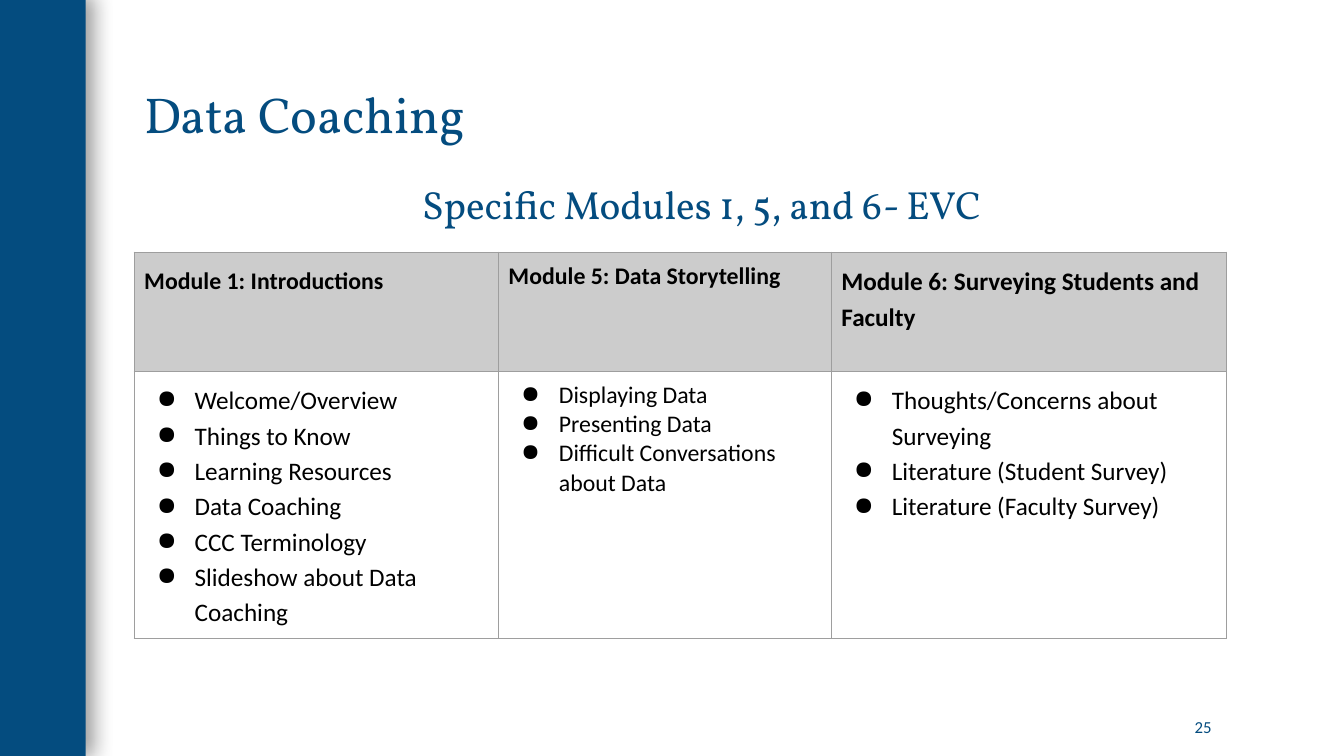
"""Build the Data Coaching slide with its table of specific modules."""
from lxml.etree import SubElement
from pptx import Presentation
from pptx.dml.color import RGBColor
from pptx.enum.shapes import MSO_SHAPE
from pptx.enum.text import MSO_ANCHOR, PP_ALIGN
from pptx.oxml import parse_xml
from pptx.oxml.ns import nsdecls, qn
from pptx.util import Pt

BLUE, BLACK, GREY, BORDER = "044C7F", "000000", "CCCCCC", "9E9E9E"

HEADINGS = [
    {"text": "Data Coaching", "box": (95.8, 54.7, 812.2, 51.8), "size": 36, "font": "Vollkorn",
     "align": PP_ALIGN.LEFT, "anchor": MSO_ANCHOR.BOTTOM, "spacing": 0.9},
    {"text": "Specific Modules 1, 5, and 6- EVC", "box": (84.2, 128.9, 833.8, 400.3), "size": 28,
     "font": "Vollkorn", "align": PP_ALIGN.CENTER, "anchor": MSO_ANCHOR.TOP, "spacing": 0.9},
    {"text": "25", "box": (782.6, 509.8, 90, 19.4), "size": 12, "font": "Calibri",
     "align": PP_ALIGN.RIGHT, "anchor": MSO_ANCHOR.MIDDLE, "spacing": 1},
]

MODULES = [
    {"title": "Module 1: Introductions", "width": 260.2, "title_size": 17, "title_spacing": 1.15,
     "topic_size": 18, "topic_spacing": 1.15,
     "topics": ["Welcome/Overview", "Things to Know", "Learning Resources", "Data Coaching",
                "CCC Terminology", "Slideshow about Data Coaching"]},
    {"title": "Module 5: Data Storytelling", "width": 237.8, "title_size": 17, "title_spacing": 1,
     "topic_size": 17, "topic_spacing": 1,
     "topics": ["Displaying Data", "Presenting Data", "Difficult Conversations about Data"]},
    {"title": "Module 6: Surveying Students and Faculty", "width": 282.5, "title_size": 18,
     "title_spacing": 1.15, "topic_size": 18, "topic_spacing": 1.15,
     "topics": ["Thoughts/Concerns about Surveying", "Literature (Student Survey)",
                "Literature (Faculty Survey)"]},
]
TABLE_LEFT, TABLE_TOP = 95.8, 180
ROW_HEIGHTS = [85, 190.8]
CELL_INSET, TOPIC_INDENT, BULLET_HANG = 7.2, 36, 27


def color(hex_text):
    return RGBColor.from_string(hex_text)


def style(paragraph, size, font, ink, spacing, bold=False):
    paragraph.line_spacing = spacing
    for run in paragraph.runs:
        run.font.size = Pt(size)
        run.font.name = font
        run.font.bold = bold
        run.font.color.rgb = color(ink)


def add_bullet(paragraph):
    properties = paragraph._p.get_or_add_pPr()
    properties.set("marL", str(Pt(TOPIC_INDENT)))
    properties.set("indent", str(-Pt(BULLET_HANG)))
    bullet_color = SubElement(properties, qn("a:buClr"))
    SubElement(bullet_color, qn("a:srgbClr"), val=BLACK)
    SubElement(properties, qn("a:buChar"), char="●")


def add_borders(cell):
    properties = cell._tc.get_or_add_tcPr()
    for side in ("lnL", "lnR", "lnT", "lnB"):
        line = SubElement(properties, qn(f"a:{side}"), w=str(Pt(0.75)))
        fill = SubElement(line, qn("a:solidFill"))
        SubElement(fill, qn("a:srgbClr"), val=BORDER)


def add_sidebar(slide):
    sidebar = slide.shapes.add_shape(MSO_SHAPE.RECTANGLE, Pt(0), Pt(-2.9), Pt(61.2), Pt(542.9))
    sidebar.fill.solid()
    sidebar.fill.fore_color.rgb = color(BLUE)
    sidebar.line.fill.background()
    sidebar._element.spPr.append(parse_xml(
        f'<a:effectLst {nsdecls("a")}>'
        f'<a:outerShdw blurRad="{Pt(15)}" dist="{Pt(5)}" dir="0" rotWithShape="0">'
        f'<a:srgbClr val="{BLACK}"><a:alpha val="40000"/></a:srgbClr>'
        '</a:outerShdw></a:effectLst>'))


def add_heading(slide, heading):
    frame = slide.shapes.add_textbox(*map(Pt, heading["box"])).text_frame
    frame.word_wrap = True
    frame.vertical_anchor = heading["anchor"]
    frame.text = heading["text"]
    paragraph = frame.paragraphs[0]
    paragraph.alignment = heading["align"]
    style(paragraph, heading["size"], heading["font"], BLUE, heading["spacing"])


def prepare_cell(cell, text):
    cell.margin_left = cell.margin_right = Pt(CELL_INSET)
    cell.margin_top = cell.margin_bottom = Pt(CELL_INSET)
    add_borders(cell)
    cell.text_frame.text = text
    return cell.text_frame.paragraphs


def add_modules(slide):
    width = sum(module["width"] for module in MODULES)
    table = slide.shapes.add_table(len(ROW_HEIGHTS), len(MODULES), Pt(TABLE_LEFT), Pt(TABLE_TOP),
                                   Pt(width), Pt(sum(ROW_HEIGHTS))).table
    table.horz_banding = False
    for row, height in zip(table.rows, ROW_HEIGHTS):
        row.height = Pt(height)
    for column, module in enumerate(MODULES):
        table.columns[column].width = Pt(module["width"])
        title_cell, topics_cell = table.cell(0, column), table.cell(1, column)
        for paragraph in prepare_cell(title_cell, module["title"]):
            style(paragraph, module["title_size"], "Calibri", BLACK, module["title_spacing"], True)
        title_cell.fill.solid()
        title_cell.fill.fore_color.rgb = color(GREY)
        for paragraph in prepare_cell(topics_cell, "\n".join(module["topics"])):
            add_bullet(paragraph)
            style(paragraph, module["topic_size"], "Calibri", BLACK, module["topic_spacing"])
        topics_cell.fill.background()


def main():
    deck = Presentation()
    deck.slide_width, deck.slide_height = Pt(960), Pt(540)
    slide = deck.slides.add_slide(deck.slide_layouts[6])
    add_sidebar(slide)
    for heading in HEADINGS:
        add_heading(slide, heading)
    add_modules(slide)
    deck.save("out.pptx")


if __name__ == "__main__":
    main()
